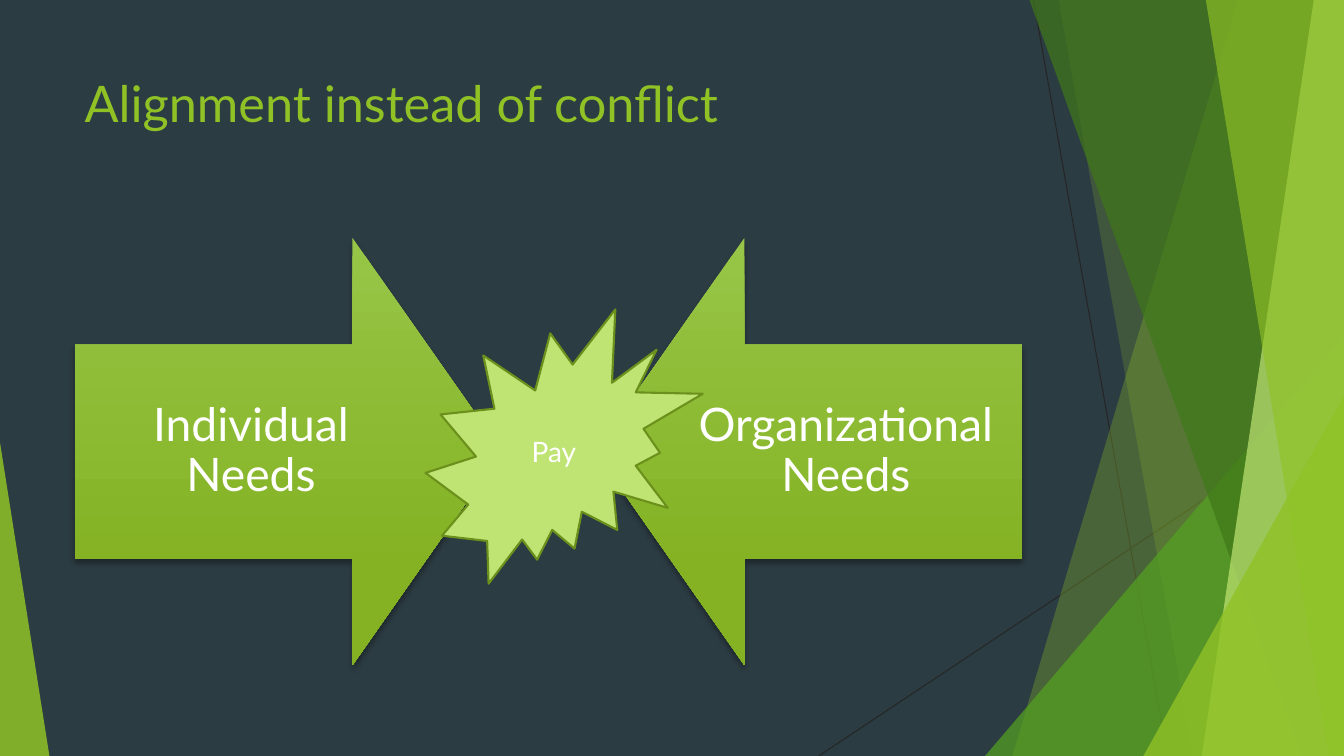
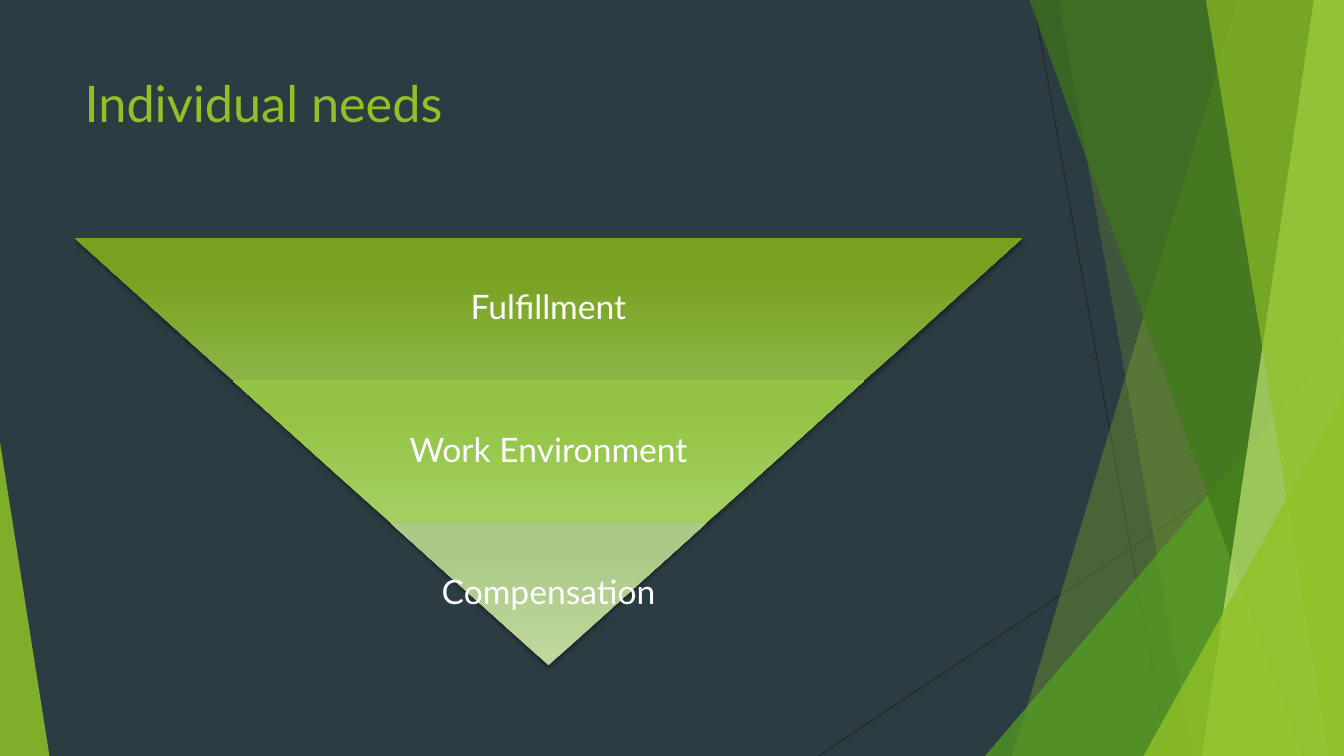
from lxml import etree
from pptx import Presentation
from pptx import util as u
from pptx.dml.color import RGBColor
from pptx.enum import shapes, text
from pptx.oxml.ns import qn

FONT = "Lato"
BACK, GREEN, DARK, LEAF = "2C3C43", "90C226", "3F7819", "54A021"
LIME, OLIVE, WHITE, HAIR = "C0E474", "6B901C", "FFFFFF", "262626"
W, H = 13.33, 7.5
TITLE_BOX = (0.74, 0.67, 9.4, 1.44)
BODY_BOX = (0.74, 2.36, 9.4, 4.24)
MSO = shapes.MSO_SHAPE


def rgb(value):
    return RGBColor.from_string(value)


def inches(*values):
    return [u.Inches(v) for v in values]


def paint(sp, color, opacity=100):
    """Flat fill without line or shadow; opacity in percent."""
    sp.shadow.inherit = False
    sp.line.fill.background()
    sp.fill.solid()
    sp.fill.fore_color.rgb = rgb(color)
    if opacity < 100:
        clr = sp._element.spPr.find(qn("a:solidFill"))[0]
        etree.SubElement(clr, qn("a:alpha"), val=str(opacity * 1000))


def shade(sp, top, bottom, blur, dist):
    """Vertical gradient with a soft shadow below."""
    sp.line.fill.background()
    sp.fill.gradient()
    sp.fill.gradient_angle = 270
    for stop, color, pos in zip(sp.fill.gradient_stops, (top, bottom), (0, 0.78)):
        stop.color.rgb = rgb(color)
        stop.position = pos
    sp.shadow.inherit = False
    effects = sp._element.spPr.find(qn("a:effectLst"))
    shadow = etree.SubElement(
        effects, qn("a:outerShdw"), blurRad=str(u.Pt(blur)),
        dist=str(u.Pt(dist)), dir="5400000", rotWithShape="0")
    clr = etree.SubElement(shadow, qn("a:srgbClr"), val="000000")
    etree.SubElement(clr, qn("a:alpha"), val="35000")


def write(sp, words, size, color=WHITE, align=text.PP_ALIGN.CENTER,
          anchor=text.MSO_ANCHOR.MIDDLE, inset=None, spacing=None):
    tf = sp.text_frame
    frame = {"word_wrap": True, "vertical_anchor": anchor,
             "auto_size": text.MSO_AUTO_SIZE.NONE}
    if inset is not None:
        for side in ("left", "top", "right", "bottom"):
            frame["margin_" + side] = u.Inches(inset)
    for name, value in frame.items():
        setattr(tf, name, value)
    p = tf.paragraphs[0]
    p.alignment = align
    p.line_spacing = spacing
    r = p.add_run()
    r.text = words
    for name, value in {"name": FONT, "size": u.Pt(size), "bold": False}.items():
        setattr(r.font, name, value)
    r.font.color.rgb = rgb(color)


def label(s, box, words, size, inset):
    sp = s.shapes.add_textbox(*inches(*box))
    write(sp, words, size, inset=inset, spacing=0.9)


# Shared backdrop
def hairline(s, x1, y1, x2, y2):
    line = s.shapes.add_connector(
        shapes.MSO_CONNECTOR.STRAIGHT, *inches(x1, y1, x2, y2))
    line.line.color.rgb = rgb(HAIR)
    line.line.width = u.Pt(0.75)
    etree.SubElement(line._element.spPr, qn("a:effectLst"))


def band(s, top_x, bottom_x, color, opacity):
    """Full-height panel from a slanted left edge to the slide's right edge."""
    points = [inches(*pt) for pt in
              ((top_x, 0), (W, 0), (W, H), (bottom_x, H))]
    outline = s.shapes.build_freeform(*points[0])
    outline.add_line_segments(points[1:], close=True)
    paint(outline.convert_to_shape(), color, opacity)


def wedge(s, left, top, width, apex, color, opacity):
    """Triangle standing on the slide's bottom edge."""
    sp = s.shapes.add_shape(
        MSO.ISOSCELES_TRIANGLE, *inches(left, top, width, H - top))
    sp.adjustments[0] = apex
    paint(sp, color, opacity)


def backdrop(s):
    hairline(s, 10.25, 0, 11.58, H)
    hairline(s, W, 4.03, 8.12, H)
    band(s, 12.28, 10.04, GREEN, 30)
    band(s, 10.5, 11.83, GREEN, 20)
    wedge(s, 9.77, 3.33, 3.56, 1, LEAF, 72)
    band(s, 10.21, 12.91, DARK, 70)
    band(s, 13.03, 11.92, LIME, 70)
    band(s, 11.96, 13.18, GREEN, 65)
    wedge(s, 11.34, 3.93, 1.99, 1, GREEN, 80)
    wedge(s, 0, 4.39, 0.49, 0, GREEN, 85)


def dress_layout(layout, s):
    """Draw the backdrop on s, then move it behind the layout's placeholders."""
    layout.background.fill.solid()
    layout.background.fill.fore_color.rgb = rgb(BACK)
    backdrop(s)
    parts = [sp._element for sp in s.shapes if not sp.is_placeholder]
    for i, el in enumerate(parts):
        el.xpath(".//p:cNvPr")[0].set("id", str(100 + i))
        layout.shapes._spTree.insert(2 + i, el)


def set_title(s, words):
    sp = s.shapes.title
    sp.left, sp.top, sp.width, sp.height = inches(*TITLE_BOX)
    write(sp, words, 36, GREEN, text.PP_ALIGN.LEFT, text.MSO_ANCHOR.TOP)


# Two arrows meeting at a burst
def facing_arrows(s, box, left_words, right_words, burst_words):
    x, y, w, h = box
    text_w = 3.5
    sides = ((MSO.RIGHT_ARROW, x, x, left_words),
             (MSO.LEFT_ARROW, x + w - h, x + w - text_w, right_words))
    for kind, arrow_x, text_x, words in sides:
        sp = s.shapes.add_shape(kind, *inches(arrow_x, y, h, h))
        sp.adjustments[0], sp.adjustments[1] = 0.5, 0.35
        shade(sp, "97C547", "84B223", 4, 3)
        label(s, (text_x, y + h / 4, text_w, h / 2), words, 33, 0.26)
    sp = s.shapes.add_shape(
        MSO.EXPLOSION2, *inches(x + 3.48, y + 0.71, 2.75, 2.72))
    paint(sp, LIME)
    sp.line.color.rgb = rgb(OLIVE)
    sp.line.width = u.Pt(1.5)
    write(sp, burst_words, 20)


# Inverted pyramid, widest level first
def inverted_pyramid(s, box, levels):
    x, y, w, h = box
    n = len(levels)
    step, slant = h / n, w / 2 / n
    for i, (words, top, bottom) in enumerate(levels):
        left, width = x + i * slant, w - 2 * i * slant
        level_y = y + i * step
        sp = s.shapes.add_shape(
            MSO.TRAPEZOID, *inches(left, level_y, width, step))
        sp.rotation = 180
        sp.adjustments[0] = slant / step
        shade(sp, top, bottom, 3, 2)
        label(s, (left, level_y, width, step), words, 24, 0.03)


def main():
    prs = Presentation()
    prs.slide_width, prs.slide_height = inches(W, H)
    layout = prs.slide_layouts[5]

    s = prs.slides.add_slide(layout)
    dress_layout(layout, s)
    set_title(s, "Alignment instead of conflict")
    facing_arrows(s, BODY_BOX, "Individual Needs", "Organizational Needs", "Pay")

    s = prs.slides.add_slide(layout)
    set_title(s, "Individual needs")
    inverted_pyramid(s, BODY_BOX, [
        ("Fulfillment", "8BB445", "78A120"),
        ("Work Environment", "A4D063", "93C445"),
        ("Compensation", "BFD89F", "ACCA87"),
    ])
    prs.save("out.pptx")


if __name__ == "__main__":
    main()
